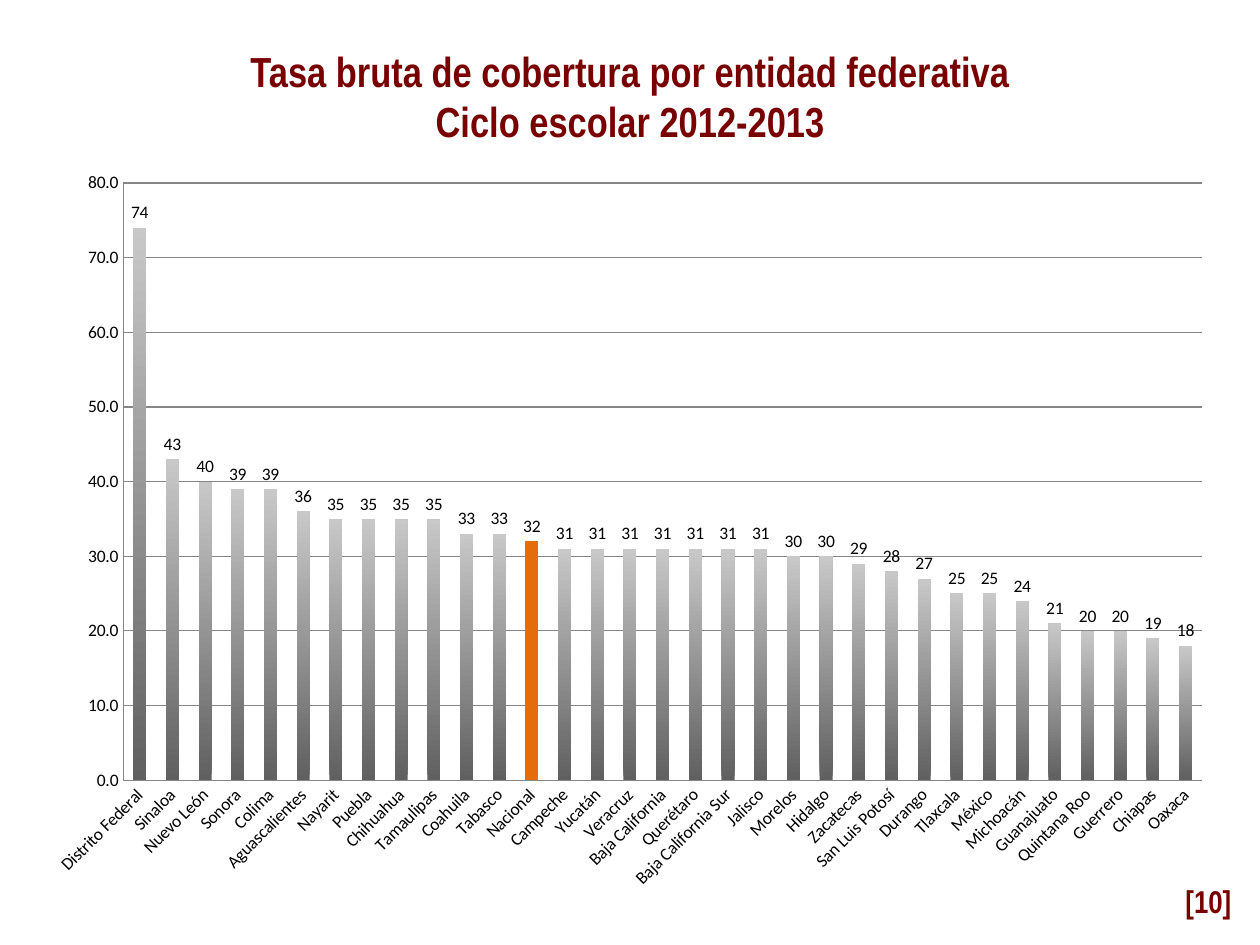
from lxml import etree
from pptx import Presentation
from pptx.chart.data import CategoryChartData
from pptx.dml.color import RGBColor
from pptx.enum.chart import XL_CHART_TYPE as ChartType, XL_LABEL_POSITION as LabelPos
from pptx.enum.chart import XL_TICK_MARK as Tick
from pptx.enum.text import MSO_ANCHOR as Anchor, MSO_AUTO_SIZE as AutoSize, PP_ALIGN as Align
from pptx.oxml.ns import qn
from pptx.util import Inches, Pt

MAROON = RGBColor(0x78, 0x00, 0x00)
BLACK = RGBColor(0x00, 0x00, 0x00)
LINE_GRAY = RGBColor(0x86, 0x86, 0x86)
BAR_DARK = RGBColor(0x60, 0x60, 0x60)
BAR_LIGHT = RGBColor(0xC8, 0xC8, 0xC8)
ORANGE = RGBColor(0xE4, 0x6C, 0x0A)

COVERAGE = {
    "Distrito Federal": 74, "Sinaloa": 43, "Nuevo León": 40, "Sonora": 39,
    "Colima": 39, "Aguascalientes": 36, "Nayarit": 35, "Puebla": 35,
    "Chihuahua": 35, "Tamaulipas": 35, "Coahuila": 33, "Tabasco": 33,
    "Nacional": 32, "Campeche": 31, "Yucatán": 31, "Veracruz": 31,
    "Baja California": 31, "Querétaro": 31, "Baja California Sur": 31,
    "Jalisco": 31, "Morelos": 30, "Hidalgo": 30, "Zacatecas": 29,
    "San Luis Potosí": 28, "Durango": 27, "Tlaxcala": 25, "México": 25,
    "Michoacán": 24, "Guanajuato": 21, "Quintana Roo": 20, "Guerrero": 20,
    "Chiapas": 19, "Oaxaca": 18,
}


def write(tf, text, size=18, font="Arial Narrow", color=MAROON, bold=True,
          align=Align.LEFT, wrap=True):
    tf.word_wrap = wrap
    tf.auto_size = AutoSize.NONE
    tf.vertical_anchor = Anchor.MIDDLE
    for i, line in enumerate(text.split("\n")):
        p = tf.paragraphs[0] if i == 0 else tf.add_paragraph()
        p.alignment = align
        p.space_before = Pt(0)
        r = p.add_run()
        r.text = line
        r.font.size, r.font.name, r.font.bold = Pt(size), font, bold
        r.font.color.rgb = color


class Deck:
    def __init__(self, width=10, height=7.5):
        self.prs = Presentation()
        self.prs.slide_width, self.prs.slide_height = Inches(width), Inches(height)
        self.s = self.prs.slides.add_slide(self.prs.slide_layouts[5])

    def box(self, x, y, w, h):
        width, height = self.prs.slide_width, self.prs.slide_height
        return [round(v) for v in (x * width, y * height, w * width, h * height)]

    def title(self, text, area):
        sp = self.s.shapes.title
        sp.left, sp.top, sp.width, sp.height = self.box(*area)
        write(sp.text_frame, text, size=24, align=Align.CENTER)

    def text(self, text, area, **style):
        write(self.s.shapes.add_textbox(*self.box(*area)).text_frame, text, **style)

    def column_chart(self, values, highlight, area, plot):
        data = CategoryChartData(number_format="0.0")
        data.categories = list(values)
        data.add_series("Series 1", list(values.values()))
        chart = self.s.shapes.add_chart(
            ChartType.COLUMN_CLUSTERED, *self.box(*area), data).chart
        chart.has_legend = chart.has_title = False
        chart.font.size, chart.font.name = Pt(10), "Calibri"
        chart.font.color.rgb = BLACK
        self.style_bars(chart.plots[0], list(values).index(highlight))
        self.style_axes(chart)
        self.place_plot(chart, plot)

    def style_bars(self, bars, highlight):
        bars.gap_width, bars.vary_by_categories = 150, False
        series = bars.series[0]
        series.invert_if_negative = False
        fill = series.format.fill
        fill.gradient()
        fill.gradient_angle = 90
        for stop, color in zip(fill.gradient_stops, (BAR_DARK, BAR_LIGHT)):
            stop.color.rgb = color
        point = series.points[highlight].format.fill
        point.solid()
        point.fore_color.rgb = ORANGE
        labels = series.data_labels
        labels.show_value, labels.position = True, LabelPos.OUTSIDE_END
        labels.number_format, labels.number_format_is_linked = "#,##0", False

    def style_axes(self, chart):
        cat, val = chart.category_axis, chart.value_axis
        for axis in (cat, val):
            axis.major_tick_mark = axis.minor_tick_mark = Tick.NONE
            axis.format.line.color.rgb = LINE_GRAY
            axis.tick_labels.font.size = Pt(10)
        cat._element.find(qn("c:txPr")).find(qn("a:bodyPr")).set("rot", "-2700000")
        val.minimum_scale, val.maximum_scale, val.major_unit = 0, 80, 10
        val.major_gridlines.format.line.color.rgb = LINE_GRAY
        val.tick_labels.number_format = "0.0"
        val.tick_labels.number_format_is_linked = False

    def place_plot(self, chart, plot):
        area = chart._chartSpace.chart.plotArea
        for old in area.findall(qn("c:layout")):
            area.remove(old)
        layout = etree.Element(qn("c:layout"))
        manual = etree.SubElement(layout, qn("c:manualLayout"))
        settings = [("layoutTarget", "inner"), ("xMode", "edge"), ("yMode", "edge")]
        for tag, value in settings + list(zip("xywh", plot)):
            etree.SubElement(manual, qn(f"c:{tag}")).set("val", str(value))
        area.insert(0, layout)


def main():
    deck = Deck()
    deck.column_chart(COVERAGE, "Nacional", area=(0.027, 0.17, 0.946, 0.79),
                      plot=(0.075, 0.03, 0.905, 0.8))
    deck.title("Tasa bruta de cobertura por entidad federativa\nCiclo escolar 2012-2013",
               area=(0.126, 0.055, 0.748, 0.093))
    deck.text("[10]", area=(0.931, 0.92, 0.069, 0.067), wrap=False)
    deck.prs.save("out.pptx")


if __name__ == "__main__":
    main()
